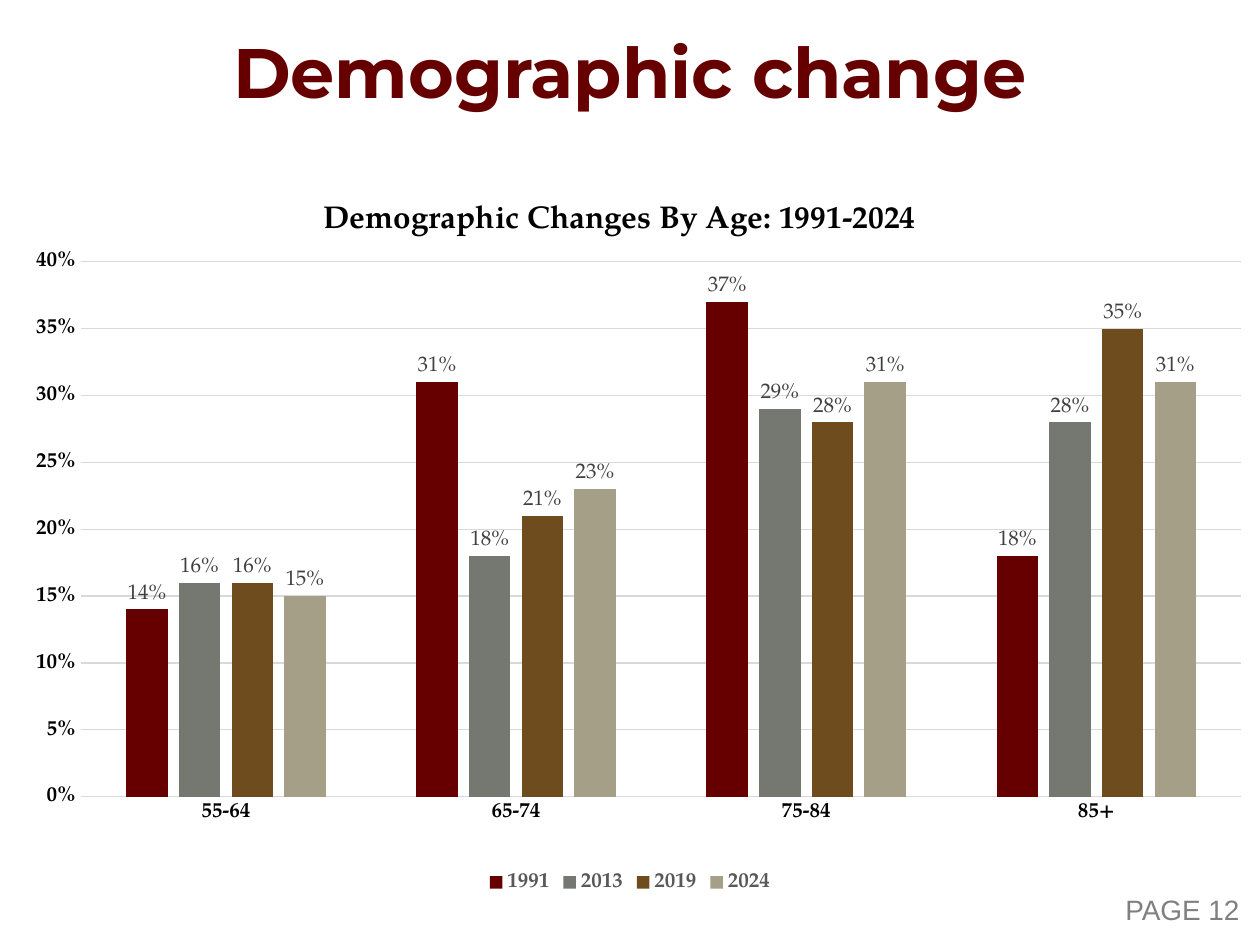
from dataclasses import dataclass

from lxml.etree import SubElement
from pptx import Presentation
from pptx.chart.data import CategoryChartData
from pptx.dml.color import RGBColor
from pptx.enum.chart import (
    XL_CHART_TYPE as ChartType,
    XL_LABEL_POSITION as LabelPosition,
    XL_LEGEND_POSITION as LegendPosition,
    XL_TICK_MARK as TickMark,
)
from pptx.enum.text import MSO_ANCHOR as Anchor, PP_ALIGN as Align
from pptx.oxml.ns import qn
from pptx.util import Pt

PX = 914400 / 126


@dataclass(frozen=True)
class Theme:
    heading_font: str = "Montserrat"
    chart_font: str = "TeX Gyre Pagella"
    footer_font: str = "Arial"
    heading: str = "660000"
    footer: str = "808080"
    ink: str = "000000"
    grid: str = "D9D9D9"
    legend: str = "595959"
    label: str = "404040"
    series: tuple = ("660000", "757871", "6E4C1E", "A69F88")
    heading_size: int = 40
    chart_title_size: int = 18
    footer_size: int = 16
    chart_size: int = 12


THEME = Theme()
AGE_GROUPS = ("55-64", "65-74", "75-84", "85+")
SHARES = {
    "1991": (0.14, 0.31, 0.37, 0.18),
    "2013": (0.16, 0.18, 0.29, 0.28),
    "2019": (0.16, 0.21, 0.28, 0.35),
    "2024": (0.15, 0.23, 0.31, 0.31),
}


def emu(box):
    return [round(length * PX) for length in box]


def style_font(font, name, size, color, bold=False):
    font.name = name
    font.size = Pt(size)
    font.bold = bold
    font.color.rgb = RGBColor.from_string(color)


def style_line(line):
    line.color.rgb = RGBColor.from_string(THEME.grid)
    line.width = Pt(0.75)


def add_text(slide, box, text, align, **font_style):
    frame = slide.shapes.add_textbox(*emu(box)).text_frame
    frame.word_wrap = True
    frame.vertical_anchor = Anchor.MIDDLE
    paragraph = frame.paragraphs[0]
    paragraph.alignment = align
    run = paragraph.add_run()
    run.text = text
    style_font(run.font, **font_style)


def set_layout(part, index, **settings):
    """Place a chart part by fractions of the chart's size; index is where its layout element belongs."""
    layout = part.find(qn("c:layout"))
    if layout is None:
        layout = SubElement(part, qn("c:layout"))
        part.insert(index, layout)
    manual = SubElement(layout, qn("c:manualLayout"))
    for tag, value in settings.items():
        SubElement(manual, qn(f"c:{tag}")).set("val", str(value))


def add_chart_title(chart, text):
    title = chart.chart_title
    run = title.text_frame.paragraphs[0].add_run()
    run.text = text
    style_font(run.font, THEME.chart_font, THEME.chart_title_size, THEME.ink, True)
    set_layout(chart._chartSpace.chart.find(qn("c:title")), 1,
               xMode="edge", yMode="edge", x=0.25, y=0.03)


def style_axes(chart):
    for axis in (chart.category_axis, chart.value_axis):
        axis.major_tick_mark = axis.minor_tick_mark = TickMark.NONE
        style_font(axis.tick_labels.font, THEME.chart_font, THEME.chart_size, THEME.ink, True)
    style_line(chart.category_axis.format.line)
    shares = chart.value_axis
    shares.minimum_scale, shares.maximum_scale, shares.major_unit = 0, 0.4, 0.05
    shares.tick_labels.number_format = "0%"
    shares.tick_labels.number_format_is_linked = False
    shares.format.line.fill.background()
    style_line(shares.major_gridlines.format.line)


def style_columns(plot):
    plot.vary_by_categories = False
    plot.gap_width, plot.overlap = 219, -27
    for year, color in zip(plot.series, THEME.series):
        year.format.fill.solid()
        year.format.fill.fore_color.rgb = RGBColor.from_string(color)
        labels = year.data_labels
        labels.show_value = True
        labels.position = LabelPosition.OUTSIDE_END
        labels.number_format = "0%"
        labels.number_format_is_linked = False
        style_font(labels.font, THEME.chart_font, THEME.chart_size, THEME.label)


def add_age_chart(slide, box):
    data = CategoryChartData(number_format="0%")
    data.categories = AGE_GROUPS
    for year, shares in SHARES.items():
        data.add_series(year, shares)
    chart = slide.shapes.add_chart(ChartType.COLUMN_CLUSTERED, *emu(box), data).chart
    style_font(chart.font, THEME.chart_font, THEME.chart_size, THEME.ink)
    add_chart_title(chart, "Demographic Changes By Age: 1991-2024")
    style_axes(chart)
    style_columns(chart.plots[0])
    set_layout(chart._chartSpace.chart.plotArea, 0, layoutTarget="inner",
               xMode="edge", yMode="edge", x=0.06, y=0.12, w=0.93, h=0.74)

    chart.has_legend = True
    chart.legend.position = LegendPosition.BOTTOM
    chart.legend.include_in_layout = False
    style_font(chart.legend.font, THEME.chart_font, THEME.chart_size, THEME.legend, True)


def add_demographic_slide(deck, box):
    left, top, width, height = box
    slide = deck.slides.add_slide(deck.slide_layouts[6])
    margin = 6
    inner = width - 2 * margin
    add_text(slide, (left + width - 210, top + height - 59, 202, 46), "PAGE 12", Align.RIGHT,
             name=THEME.footer_font, size=THEME.footer_size, color=THEME.footer)
    add_text(slide, (left + margin, top + 9, inner, 123), "Demographic change", Align.CENTER,
             name=THEME.heading_font, size=THEME.heading_size, color=THEME.heading, bold=True)
    add_age_chart(slide, (left + margin, top + 175, inner, 723))


def main():
    deck = Presentation()
    slide_box = (0, 0, 1260, 945)
    deck.slide_width, deck.slide_height = emu(slide_box[2:])
    add_demographic_slide(deck, slide_box)
    deck.save("out.pptx")


if __name__ == "__main__":
    main()
